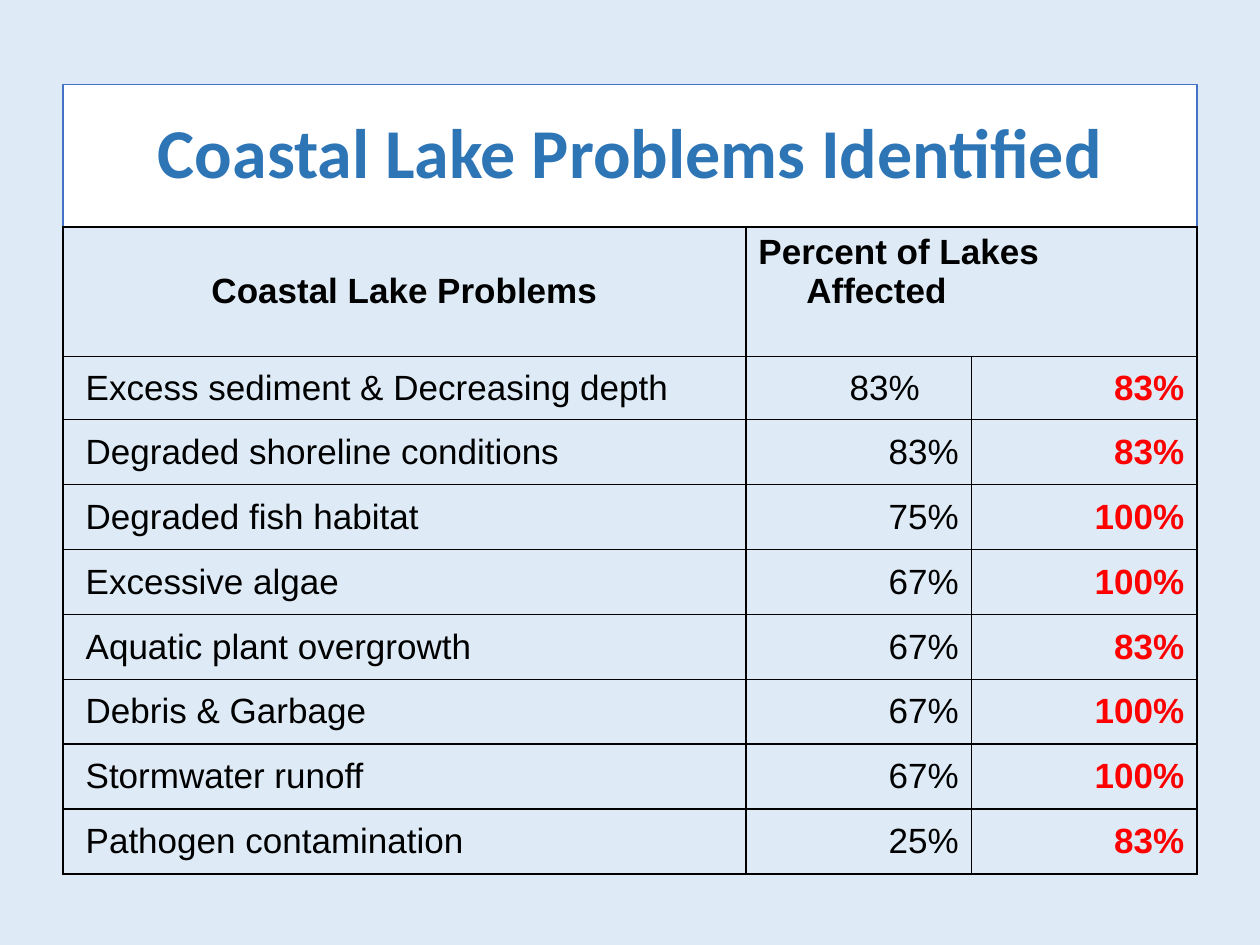
import pptx
import pptx.util
import pptx.dml.color
import pptx.enum.shapes
import pptx.enum.text
import pptx.oxml.ns
from lxml import etree

TITLE = "Coastal Lake Problems Identified"
HEADERS = ("Coastal Lake Problems", "Percent of Lakes Affected")
PROBLEMS = [
    ("Excess sediment & Decreasing depth", "83%", "83%"),
    ("Degraded shoreline conditions", "83%", "83%"),
    ("Degraded fish habitat", "75%", "100%"),
    ("Excessive algae", "67%", "100%"),
    ("Aquatic plant overgrowth", "67%", "83%"),
    ("Debris & Garbage", "67%", "100%"),
    ("Stormwater runoff", "67%", "100%"),
    ("Pathogen contamination", "25%", "83%"),
]

THEME = {
    "background": "DEEBF7", "panel": "FFFFFF", "panel_line": "4472C4",
    "title": "2E75B6", "text": "000000", "accent": "FF0000", "border": "000000",
    "title_font": "Calibri", "table_font": "Arial",
    "title_size": 40, "table_size": 20, "line": 1,
}

# Layout in inches
SLIDE_W, SLIDE_H = 10, 7.5
LEFT, TITLE_TOP, TABLE_TOP, TABLE_BOTTOM = 0.5, 0.67, 1.8, 6.94
WIDTH = SLIDE_W - 2 * LEFT
PERCENT_W = 1.79
COLUMNS = [WIDTH - 2 * PERCENT_W, PERCENT_W, PERCENT_W]
HEADER_H, FIRST_H = 1.03, 0.5
REST = len(PROBLEMS) - 1
ROWS = [HEADER_H, FIRST_H] + [(TABLE_BOTTOM - TABLE_TOP - HEADER_H - FIRST_H) / REST] * REST
HANGING, LABEL_MARGIN, FIRST_VALUE_MARGIN = 0.38, 0.18, 0.41

Inches, Pt = pptx.util.Inches, pptx.util.Pt
ALIGN, ANCHOR = pptx.enum.text.PP_ALIGN, pptx.enum.text.MSO_ANCHOR
qn = pptx.oxml.ns.qn


def rgb(name):
    return pptx.dml.color.RGBColor.from_string(THEME[name])


def add_run(p, text, font, size, color, bold):
    r = p.add_run()
    r.text = text
    r.font.name = THEME[font]
    r.font.size = Pt(THEME[size])
    r.font.color.rgb = rgb(color)
    r.font.bold = bold


def set_borders(cell):
    tcPr = cell._tc.get_or_add_tcPr()
    for i, side in enumerate(("lnL", "lnR", "lnT", "lnB")):
        ln = etree.Element(qn("a:" + side), w=str(Pt(THEME["line"])))
        fill = etree.SubElement(ln, qn("a:solidFill"))
        etree.SubElement(fill, qn("a:srgbClr"), val=THEME["border"])
        tcPr.insert(i, ln)


def write_cell(cell, text, align, color="text", bold=False):
    cell.vertical_anchor = ANCHOR.MIDDLE
    p = cell.text_frame.paragraphs[0]
    p.alignment = align
    pPr = p._p.get_or_add_pPr()
    pPr.set("marL", str(Inches(HANGING)))
    pPr.set("indent", str(-Inches(HANGING)))
    add_run(p, text, "table_font", "table_size", color, bold)


prs = pptx.Presentation()
prs.slide_width, prs.slide_height = Inches(SLIDE_W), Inches(SLIDE_H)
s = prs.slides.add_slide(prs.slide_layouts[6])
s.background.fill.solid()
s.background.fill.fore_color.rgb = rgb("background")

# Title panel
sp = s.shapes.add_shape(
    pptx.enum.shapes.MSO_SHAPE.RECTANGLE, Inches(LEFT), Inches(TITLE_TOP),
    Inches(WIDTH), Inches(TABLE_TOP - TITLE_TOP))
sp.shadow.inherit = False
sp.fill.solid()
sp.fill.fore_color.rgb = rgb("panel")
sp.line.color.rgb = rgb("panel_line")
sp.line.width = Pt(THEME["line"])
tf = sp.text_frame
tf.word_wrap = True
tf.vertical_anchor = ANCHOR.MIDDLE
p = tf.paragraphs[0]
p.alignment = ALIGN.CENTER
p.line_spacing = 0.9
add_run(p, TITLE, "title_font", "title_size", "title", True)

# Table grid
table = s.shapes.add_table(
    len(ROWS), len(COLUMNS), Inches(LEFT), Inches(TABLE_TOP),
    Inches(WIDTH), Inches(sum(ROWS))).table
table.first_row = table.horz_banding = False
for column, width in zip(table.columns, COLUMNS):
    column.width = Inches(width)
for row, height in zip(table.rows, ROWS):
    row.height = Inches(height)
for cell in table.iter_cells():
    cell.fill.background()
    set_borders(cell)

# Header row
table.cell(0, 1).merge(table.cell(0, 2))
write_cell(table.cell(0, 0), HEADERS[0], ALIGN.CENTER, bold=True)
write_cell(table.cell(0, 1), HEADERS[1], ALIGN.LEFT, bold=True)
table.cell(0, 1).vertical_anchor = ANCHOR.TOP

# Problem rows
for i, (problem, percent, accent_percent) in enumerate(PROBLEMS, start=1):
    write_cell(table.cell(i, 0), problem, ALIGN.LEFT)
    table.cell(i, 0).margin_left = Inches(LABEL_MARGIN)
    write_cell(table.cell(i, 1), percent, ALIGN.RIGHT)
    write_cell(table.cell(i, 2), accent_percent, ALIGN.RIGHT, "accent", True)
table.cell(1, 1).margin_right = Inches(FIRST_VALUE_MARGIN)

prs.save("out.pptx")
